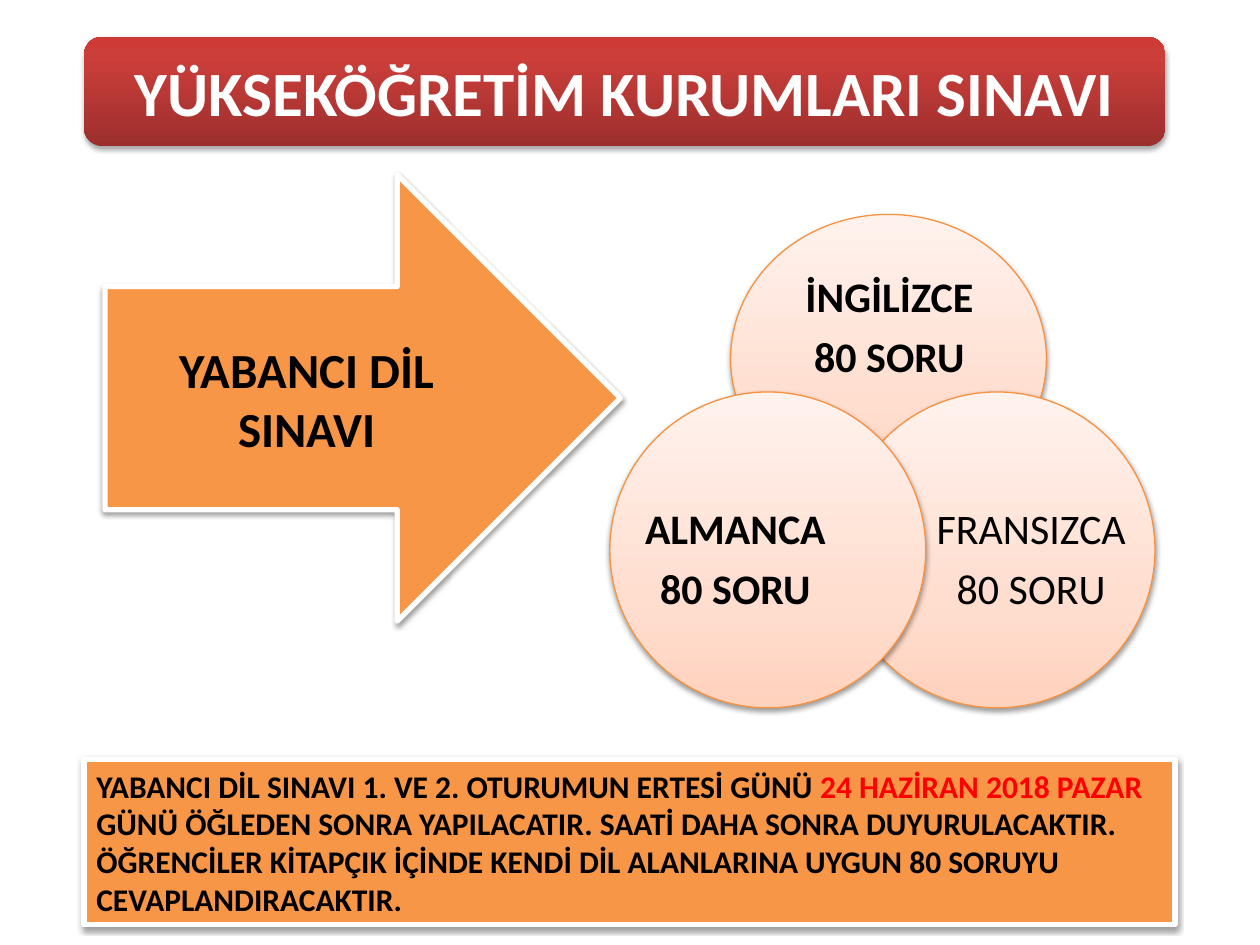
from lxml.etree import SubElement
from pptx import Presentation
from pptx.dml.color import RGBColor
from pptx.enum.shapes import MSO_SHAPE as Shape
from pptx.enum.text import MSO_ANCHOR as Anchor, PP_ALIGN as Align
from pptx.oxml.ns import qn
from pptx.util import Pt

COLORS = {
    "white": "FFFFFF", "black": "000000", "red": "FF0000",
    "orange": "F79646", "outline": "F69240",
}
BANNER_STOPS = [(0, "9C2F2D"), (80, "CB3E3A"), (100, "CE3B37")]
CIRCLE_STOPS = [(0, "FFD2BD"), (35, "FFDED0"), (100, "FFF2ED")]

TITLE = "YÜKSEKÖĞRETİM KURUMLARI SINAVI"
TITLE_AREA = (48, 21, 618, 62.5)
EXAM = "YABANCI DİL SINAVI"
EXAM_AREA = (60, 100, 294.5, 255)
QUESTIONS = "80 SORU"
LANGUAGES = [
    ("İNGİLİZCE", True, (417.5, 122.5, 180.5, 165), (442, 151, 132.5, 74)),
    ("FRANSIZCA", False, (479.5, 224, 180.5, 180.5), (535, 271, 108.5, 99.5)),
    ("ALMANCA", True, (348.5, 224, 180.5, 180.5), (366, 271, 108.5, 99.5)),
]
NOTICE = [
    ("YABANCI DİL SINAVI 1. VE 2. OTURUMUN ERTESİ GÜNÜ ", "black"),
    ("24 HAZİRAN 2018 PAZAR ", "red"),
    ("GÜNÜ ÖĞLEDEN SONRA YAPILACATIR. SAATİ DAHA SONRA DUYURULACAKTIR. "
     "ÖĞRENCİLER KİTAPÇIK İÇİNDE KENDİ DİL ALANLARINA UYGUN 80 SORUYU "
     "CEVAPLANDIRACAKTIR.", "black"),
]
NOTICE_AREA = (48, 434, 623.5, 94.5)


def points(area):
    return [Pt(value) for value in area]


def add_span(para, text, size, color="black", bold=True):
    span = para.add_run()
    span.text = text
    span.font.name = "Calibri"
    span.font.size = Pt(size)
    span.font.bold = bold
    span.font.color.rgb = RGBColor.from_string(COLORS[color])


def add_shadow(shape, opacity, distance):
    shape.shadow.inherit = False
    effects = shape._element.spPr.find(qn("a:effectLst"))
    shadow = SubElement(
        effects, qn("a:outerShdw"), blurRad=str(Pt(3.1)), dist=str(Pt(distance)),
        dir="5400000", rotWithShape="0")
    color = SubElement(shadow, qn("a:srgbClr"), val=COLORS["black"])
    SubElement(color, qn("a:alpha"), val=str(opacity * 1000))


def add_figure(page, kind, area, fill, line=None, opacity=38, distance=1.6):
    figure = page.shapes.add_shape(kind, *points(area))
    if isinstance(fill, list):
        figure.fill.gradient()
        figure.fill.gradient_angle = 90
        stops = figure._element.spPr.find(qn("a:gradFill")).find(qn("a:gsLst"))
        stops.clear()
        for position, color in fill:
            stop = SubElement(stops, qn("a:gs"), pos=str(position * 1000))
            SubElement(stop, qn("a:srgbClr"), val=color)
    else:
        figure.fill.solid()
        figure.fill.fore_color.rgb = RGBColor.from_string(COLORS[fill])
    if line:
        color, width = line
        figure.line.color.rgb = RGBColor.from_string(COLORS[color])
        figure.line.width = Pt(width)
    else:
        figure.line.fill.background()
    add_shadow(figure, opacity, distance)
    return figure


def write(shape, spans, size, align):
    frame = shape.text_frame
    frame.word_wrap = True
    frame.vertical_anchor = Anchor.MIDDLE
    para = frame.paragraphs[0]
    para.alignment = align
    for text, color in spans:
        add_span(para, text, size, color)


def add_title(page):
    banner = add_figure(page, Shape.ROUNDED_RECTANGLE, TITLE_AREA, BANNER_STOPS,
                        opacity=35, distance=1.8)
    title = page.shapes.title
    title.left, title.top, title.width, title.height = points(TITLE_AREA)
    write(title, [(TITLE, "white")], 36, Align.CENTER)
    title._element.addprevious(banner._element)


def add_language(page, name, bold, circle_area, label_area):
    add_figure(page, Shape.OVAL, circle_area, CIRCLE_STOPS, ("outline", 0.75))
    box = page.shapes.add_textbox(*points(label_area))
    frame = box.text_frame
    frame.word_wrap = False
    frame.vertical_anchor = Anchor.MIDDLE
    frame.margin_left = frame.margin_right = 0
    frame.margin_top = frame.margin_bottom = 0
    for index, text in enumerate((name, QUESTIONS)):
        para = frame.add_paragraph() if index else frame.paragraphs[0]
        para.alignment = Align.CENTER
        para.line_spacing = 0.9
        para.space_after = Pt(8.4)
        add_span(para, text, 24, bold=bold)


def main():
    deck = Presentation()
    deck.slide_width, deck.slide_height = Pt(720), Pt(540)
    page = deck.slides.add_slide(deck.slide_layouts[5])
    add_title(page)
    for language in LANGUAGES:
        add_language(page, *language)
    arrow = add_figure(page, Shape.RIGHT_ARROW, EXAM_AREA, "orange", ("white", 3))
    write(arrow, [(EXAM, "black")], 28, Align.CENTER)
    notice = add_figure(page, Shape.RECTANGLE, NOTICE_AREA, "orange", ("white", 3))
    write(notice, NOTICE, 18, Align.LEFT)
    deck.save("out.pptx")


if __name__ == "__main__":
    main()
